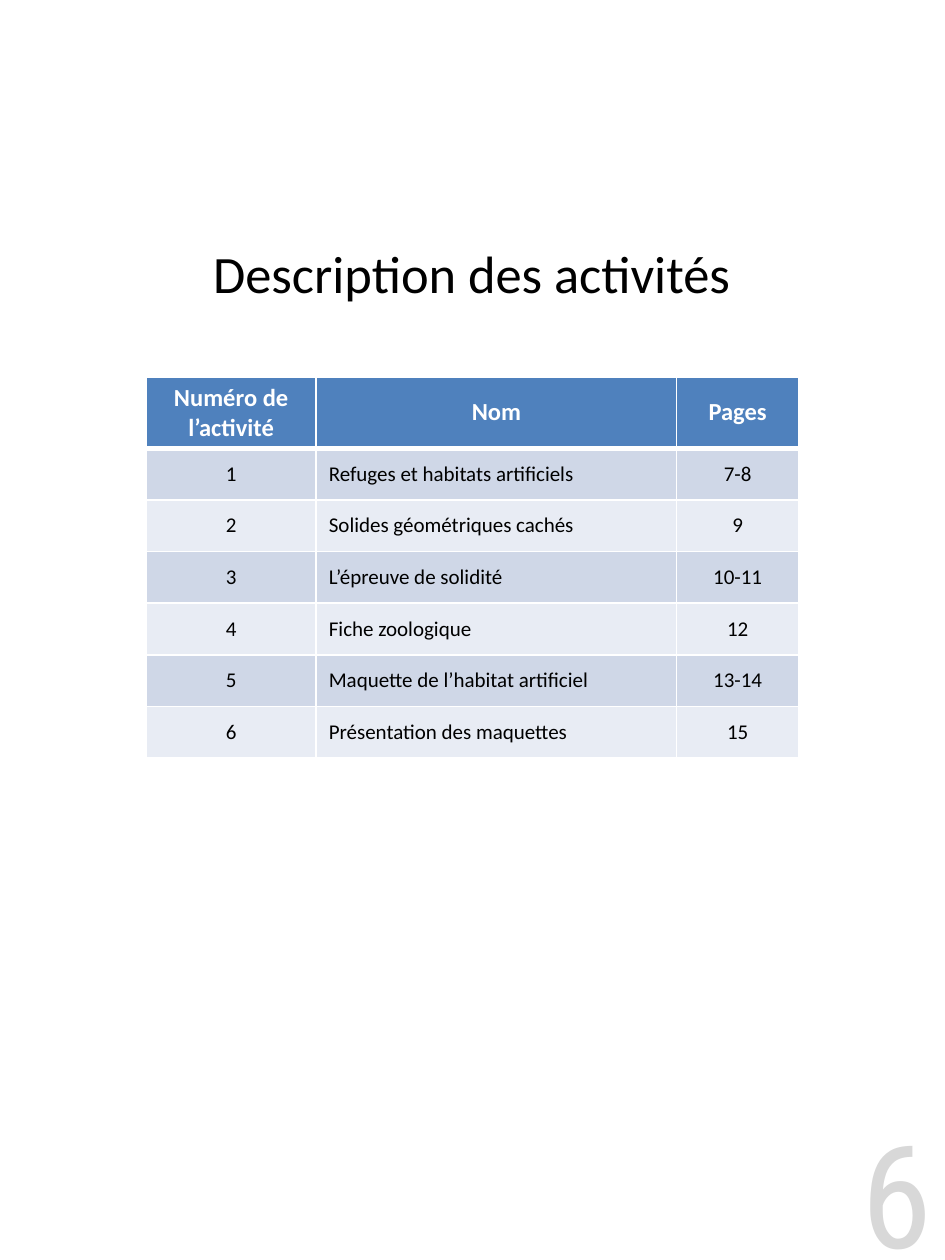
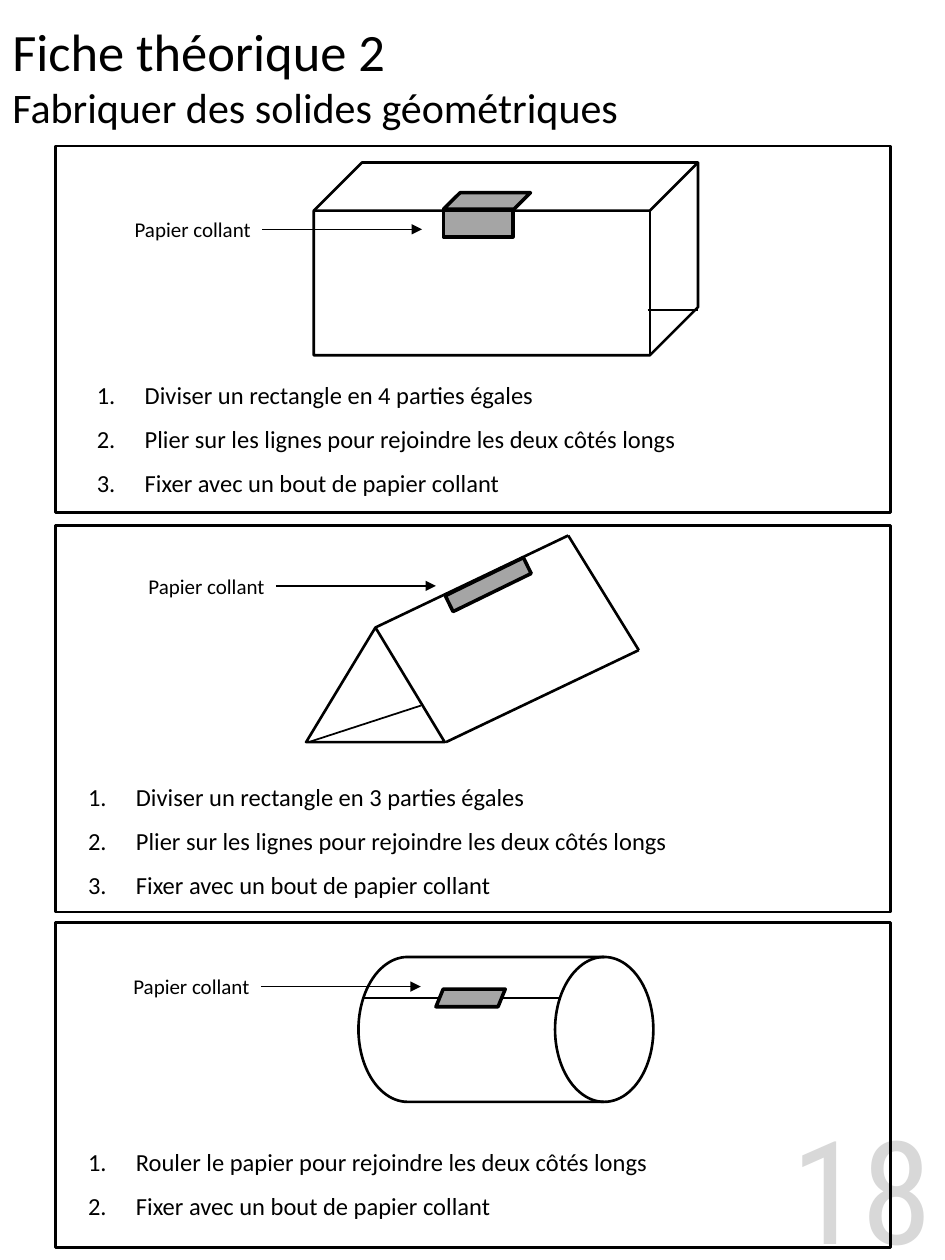
from dataclasses import dataclass
from lxml.etree import SubElement
from pptx import Presentation
from pptx.dml.color import RGBColor
from pptx.enum.shapes import MSO_CONNECTOR, MSO_SHAPE
from pptx.enum.text import MSO_ANCHOR, MSO_AUTO_SIZE, PP_ALIGN
from pptx.oxml.ns import qn
from pptx.util import Inches, Pt


@dataclass(frozen=True)
class Theme:
    ink: str = "000000"
    white: str = "FFFFFF"
    header: str = "4F81BD"
    bands: tuple = ("CFD7E7", "E8ECF4")
    tape: str = "A5A5A5"
    page_number: str = "D8D8D8"
    body_font: str = "Calibri"
    number_font: str = "Roboto Condensed"
    title_size: int = 30
    subtitle_size: int = 24
    steps_size: int = 14
    small_size: int = 12
    number_size: int = 82
    outline: float = 1.5
    tape_outline: float = 2
    thin: float = 0.75


@dataclass(frozen=True)
class Box:
    left: float
    top: float
    width: float
    height: float

    def inside(self, x, y, width, height):
        return Box(self.left + x, self.top + y, width, height)

    def point(self, x, y):
        return self.left + x, self.top + y

    def lengths(self):
        return [Inches(n) for n in (self.left, self.top, self.width, self.height)]


THEME = Theme()

ACTIVITIES = [
    ("1", "Refuges et habitats artificiels", "7-8"),
    ("2", "Solides géométriques cachés", "9"),
    ("3", "L’épreuve de solidité", "10-11"),
    ("4", "Fiche zoologique", "12"),
    ("5", "Maquette de l’habitat artificiel", "13-14"),
    ("6", "Présentation des maquettes", "15"),
]
FOLD = "Plier sur les lignes pour rejoindre les deux côtés longs"
STICK = "Fixer avec un bout de papier collant"


# Shared helpers
def style(para, size, color=THEME.ink, font=THEME.body_font, bold=False,
          align=PP_ALIGN.LEFT):
    para.alignment = align
    para.font.size = Pt(size)
    para.font.name = font
    para.font.bold = bold
    para.font.color.rgb = RGBColor.from_string(color)


def add_text(page, box, lines, size, anchor=MSO_ANCHOR.TOP, **look):
    frame = page.shapes.add_textbox(*box.lengths()).text_frame
    frame.word_wrap = True
    frame.vertical_anchor = anchor
    for index, line in enumerate(lines):
        para = frame.add_paragraph() if index else frame.paragraphs[0]
        para.text = line
        style(para, size, **look)
    return frame


def add_outline(page, kind, box, weight=THEME.outline, fill=None, turn=0, adjust=None):
    shape = page.shapes.add_shape(kind, *box.lengths())
    shape.shadow.inherit = False
    shape.rotation = turn
    shape.line.color.rgb = RGBColor.from_string(THEME.ink)
    shape.line.width = Pt(weight)
    if adjust is not None:
        shape.adjustments[0] = adjust
    if fill:
        shape.fill.solid()
        shape.fill.fore_color.rgb = RGBColor.from_string(fill)
    else:
        shape.fill.background()


def add_tape(page, box, adjust=0, turn=0):
    add_outline(page, MSO_SHAPE.PARALLELOGRAM, box, THEME.tape_outline, THEME.tape,
                turn, adjust)


def add_line(page, start, end, weight=THEME.outline, arrow=False):
    line = page.shapes.add_connector(
        MSO_CONNECTOR.STRAIGHT, *[Inches(n) for n in (*start, *end)])
    line.line.color.rgb = RGBColor.from_string(THEME.ink)
    line.line.width = Pt(weight)
    properties = line._element.spPr
    if arrow:
        SubElement(properties.find(qn("a:ln")), qn("a:tailEnd"), type="triangle")
    SubElement(properties, qn("a:effectLst"))


def add_page_number(page, box, number):
    add_text(page, box, [number], THEME.number_size, MSO_ANCHOR.MIDDLE,
             color=THEME.page_number, font=THEME.number_font, align=PP_ALIGN.RIGHT)


# Activity table
def set_borders(cell, top, bottom):
    properties = cell._tc.get_or_add_tcPr()
    for side, weight in (("L", 1), ("R", 1), ("T", top), ("B", bottom)):
        line = SubElement(properties, qn(f"a:ln{side}"), w=str(Pt(weight)))
        fill = SubElement(line, qn("a:solidFill"))
        SubElement(fill, qn("a:srgbClr"), val=THEME.white)


def add_activity_table(page, box):
    rows = [("Numéro de\nl’activité", "Nom", "Pages"), *ACTIVITIES]
    table = page.shapes.add_table(len(rows), 3, *box.lengths()).table
    for column, width in zip(table.columns, (1.35, 2.86, 0.97)):
        column.width = Inches(width)
    for r, row in enumerate(rows):
        is_header = r == 0
        table.rows[r].height = Inches(0.56 if is_header else 0.41)
        for c, text in enumerate(row):
            cell = table.cell(r, c)
            cell.text = text
            cell.vertical_anchor = MSO_ANCHOR.MIDDLE
            set_borders(cell, 3 if r == 1 else 1, 3 if is_header else 1)
            cell.fill.solid()
            cell.fill.fore_color.rgb = RGBColor.from_string(
                THEME.header if is_header else THEME.bands[(r - 1) % 2])
            is_name = c == 1 and not is_header
            for para in cell.text_frame.paragraphs:
                style(para, THEME.steps_size if is_header else THEME.small_size,
                      THEME.white if is_header else THEME.ink, bold=is_header,
                      align=PP_ALIGN.LEFT if is_name else PP_ALIGN.CENTER)


def build_activities_page(page):
    add_page_number(page, Box(6.28, 8.9, 1.22, 1.1), "6")
    add_activity_table(page, Box(1.16, 2.99, 5.18, 3))
    add_text(page, Box(1.41, 1.69, 4.67, 0.95), ["Description des activités"],
             THEME.title_size, MSO_ANCHOR.MIDDLE, align=PP_ALIGN.CENTER)


# Parts of the solid panels
def add_steps(page, box, steps):
    frame = page.shapes.add_textbox(*box.lengths()).text_frame
    frame.word_wrap = True
    frame.auto_size = MSO_AUTO_SIZE.SHAPE_TO_FIT_TEXT
    for index, step in enumerate(steps):
        para = frame.add_paragraph() if index else frame.paragraphs[0]
        para.text = step
        para.line_spacing = 1.5
        properties = para._p.get_or_add_pPr()
        properties.set("marL", str(Inches(0.38)))
        properties.set("indent", str(Inches(-0.38)))
        SubElement(properties, qn("a:buFont"), typeface="+mj-lt")
        SubElement(properties, qn("a:buAutoNum"), type="arabicPeriod")
        style(para, THEME.steps_size)


def add_tape_label(page, box):
    add_text(page, box, ["Papier collant"], THEME.small_size)
    add_line(page, box.point(1.11, 0.15), box.point(2.38, 0.15), THEME.thin, arrow=True)


def build_prism_panel(page, box):
    add_steps(page, box.inside(0.23, 1.69, 6.39, 1.12),
              ["Diviser un rectangle en 4 parties égales", FOLD, STICK])
    add_outline(page, MSO_SHAPE.CUBE, box.inside(2.05, 0.13, 3.05, 1.53), adjust=0.25)
    add_line(page, box.point(4.7, 1.3), box.point(5.1, 1.3), 1)
    # Tape folded over the edge
    add_tape(page, box.inside(3.08, 0.37, 0.69, 0.13), adjust=1.01)
    add_tape(page, box.inside(3.08, 0.51, 0.55, 0.21))
    add_tape_label(page, box.inside(0.53, 0.51, 1.38, 0.3))
    add_outline(page, MSO_SHAPE.RECTANGLE, box)


def build_triangle_panel(page, box):
    add_steps(page, box.inside(0.16, 1.87, 6.39, 1.16),
              ["Diviser un rectangle en 3 parties égales", FOLD, STICK])
    add_tape(page, box.inside(3.09, 0.4, 0.69, 0.14), turn=154)
    add_tape_label(page, box.inside(0.64, 0.33, 1.38, 0.3))
    add_outline(page, MSO_SHAPE.ISOSCELES_TRIANGLE, box.inside(1.99, 0.81, 1.1, 0.91))
    # Edges running back from the front triangle
    front_top, front_right = box.point(2.54, 0.81), box.point(3.1, 1.72)
    back_top, back_right = box.point(4.07, 0.08), box.point(4.63, 0.99)
    add_line(page, back_top, front_top)
    add_line(page, back_right, front_right)
    add_line(page, back_right, back_top)
    add_line(page, box.point(2.9, 1.43), box.point(2.01, 1.72), 1)
    add_outline(page, MSO_SHAPE.RECTANGLE, box)


def build_cylinder_panel(page, box):
    add_outline(page, MSO_SHAPE.RECTANGLE, box)
    add_steps(page, box.inside(0.16, 1.62, 6.39, 0.77),
              ["Rouler le papier pour rejoindre les deux côtés longs", STICK])
    add_outline(page, MSO_SHAPE.FLOWCHART_MAGNETIC_DISK,
                box.inside(3, -0.32, 1.15, 2.34), turn=90)
    add_tape_label(page, box.inside(0.52, 0.36, 1.38, 0.3))
    add_line(page, box.point(2.45, 0.6), box.point(4, 0.6), THEME.thin)
    add_tape(page, box.inside(3.02, 0.53, 0.55, 0.14), adjust=0.41, turn=180)


def add_sheet_title(page, box, title, subtitle):
    frame = add_text(page, box, [title], THEME.title_size, MSO_ANCHOR.MIDDLE)
    para = frame.paragraphs[0]
    para.add_line_break()
    span = para.add_run()
    span.text = subtitle
    span.font.size = Pt(THEME.subtitle_size)


def build_solids_page(page):
    add_page_number(page, Box(5.79, 8.84, 1.71, 1.16), "18")
    build_prism_panel(page, Box(0.44, 1.16, 6.63, 2.91))
    build_triangle_panel(page, Box(0.44, 4.17, 6.63, 3.07))
    build_cylinder_panel(page, Box(0.44, 7.32, 6.63, 2.58))
    add_sheet_title(page, Box(0, 0, 6.17, 1.2), "Fiche théorique 2",
                    "Fabriquer des solides géométriques")


def main():
    deck = Presentation()
    deck.slide_width, deck.slide_height = Inches(7.5), Inches(10)
    for build in (build_activities_page, build_solids_page):
        build(deck.slides.add_slide(deck.slide_layouts[6]))
    deck.save("out.pptx")


if __name__ == "__main__":
    main()
